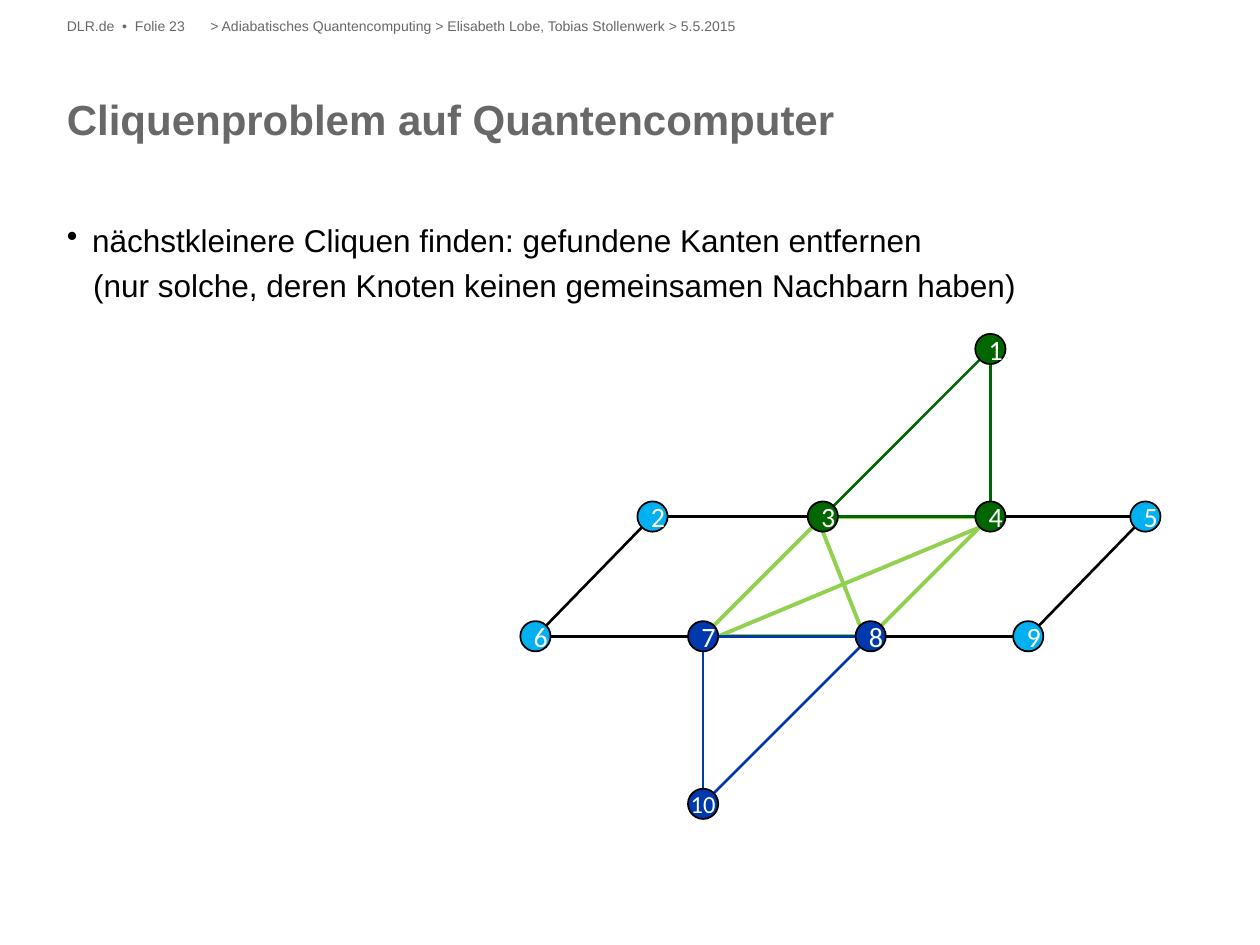
import math

import pptx
import pptx.dml.color
import pptx.enum.shapes
import pptx.enum.text
import pptx.oxml.ns
import pptx.util
from lxml import etree

Pt = pptx.util.Pt
ANCHOR = pptx.enum.text.MSO_ANCHOR
ALIGN = pptx.enum.text.PP_ALIGN
HUES = {"grey": "686868", "black": "000000", "white": "FFFFFF", "sky": "00B0F0",
        "lime": "92D050", "green": "006600", "blue": "0039AC"}


def tint(name):
    return pptx.dml.color.RGBColor.from_string(HUES[name])


def write(shape, lines, size, hue, face="Arial"):
    """Fill a shape without margins with paragraphs in one font."""
    frame = shape.text_frame
    frame.word_wrap = True
    frame.auto_size = pptx.enum.text.MSO_AUTO_SIZE.NONE
    frame.vertical_anchor = ANCHOR.TOP
    frame.margin_left = frame.margin_right = 0
    frame.margin_top = frame.margin_bottom = 0
    frame.text = "\n".join(lines)
    for par in frame.paragraphs:
        par.alignment = ALIGN.LEFT
        par.font.name = face
        par.font.size = Pt(size)
        par.font.color.rgb = tint(hue)
    return frame.paragraphs


deck = pptx.Presentation()
deck.slide_width, deck.slide_height = Pt(720), Pt(540)
slide = deck.slides.add_slide(deck.slide_layouts[5])
shapes = slide.shapes

# Header, title and text
heads = [(38.2, 82, "DLR.de  •  Folie 23"),
         (120.2, 561.6, "> Adiabatisches Quantencomputing > Elisabeth Lobe, "
                        "Tobias Stollenwerk > 5.5.2015")]
for left, width, text in heads:
    box = shapes.add_textbox(Pt(left), Pt(10.1), Pt(width), Pt(11.5))
    write(box, [text], 8, "grey")

title = shapes.title
title.left, title.top, title.width, title.height = Pt(38.2), Pt(51.1), Pt(643.7), Pt(58.3)
head = write(title, ["Cliquenproblem auf Quantencomputer"], 24, "grey")[0]
head.font.bold = True
head.line_spacing = 1.08

body = shapes.add_textbox(Pt(38.2), Pt(125.3), Pt(625), Pt(341.3))
first, second = write(body, [
    "nächstkleinere Cliquen finden: gefundene Kanten entfernen",
    "(nur solche, deren Knoten keinen gemeinsamen Nachbarn haben)"], 18, "black")
first.line_spacing = second.line_spacing = 1.05
second.space_before = Pt(3)
for par, left, hang in [(first, 14.4, -14.4), (second, 15, 0)]:
    props = par._p.get_or_add_pPr()
    props.set("marL", str(Pt(left)))
    props.set("indent", str(Pt(hang)))
mark = etree.SubElement(first._p.pPr, pptx.oxml.ns.qn("a:buChar"))
mark.set("char", "•")
first._p.pPr.remove(mark)
first._p.pPr.insert_element_before(mark, "a:tabLst", "a:defRPr", "a:extLst")

# Graph: node centres and colours
STEP, RADIUS = 95.75, 8.64
UPPER, LOWER = 295.2, 363.6
X3, X7 = 470.2, 401.8
nodes = {
    1: (X3 + STEP, UPPER - STEP, "green"),
    2: (372.9, UPPER, "sky"),
    3: (X3, UPPER, "green"),
    4: (X3 + STEP, UPPER, "green"),
    5: (654.5, UPPER, "sky"),
    6: (306, LOWER, "sky"),
    7: (X7, LOWER, "blue"),
    8: (X7 + STEP, LOWER, "blue"),
    9: (587.6, LOWER, "sky"),
    10: (X7, LOWER + STEP, "blue"),
}

# Edges: node and the side of its rim, at both ends
edges = [
    ("black", 1.5, "6 NE 2 SW, 2 E 3 W, 6 E 7 W, 4 E 5 W, 8 E 9 W, 9 NE 5 SW"),
    ("lime", 2.25, "3 S 8 NW, 7 E 4 SW, 7 NE 3 SW, 7 E 8 W, 8 NE 4 SW, 3 E 4 W"),
    ("green", 1.5, "3 E 4 W, 3 NE 1 SW, 1 S 4 N"),
    ("blue", 1.5, "7 E 8 W, 7 S 10 N, 10 NE 8 SW"),
]
SIDES = ["E", "SE", "S", "SW", "W", "NW", "N", "NE"]
for hue, width, group in edges:
    for edge in group.split(", "):
        a, aside, b, bside = edge.split()
        ends = []
        for key, side in [(a, aside), (b, bside)]:
            x, y, _ = nodes[int(key)]
            turn = SIDES.index(side) * math.pi / 4
            ends += [Pt(x + RADIUS * math.cos(turn)), Pt(y + RADIUS * math.sin(turn))]
        line = shapes.add_connector(pptx.enum.shapes.MSO_CONNECTOR.STRAIGHT, *ends)
        line.line.color.rgb = tint(hue)
        line.line.width = Pt(width)
        etree.SubElement(line._element.spPr, pptx.oxml.ns.qn("a:effectLst"))

for key, (x, y, hue) in nodes.items():
    node = shapes.add_shape(pptx.enum.shapes.MSO_SHAPE.OVAL, Pt(x - RADIUS),
                            Pt(y - RADIUS), Pt(2 * RADIUS), Pt(2 * RADIUS))
    node.shadow.inherit = False
    node.fill.solid()
    node.fill.fore_color.rgb = tint(hue)
    node.line.color.rgb = tint("black")
    node.line.width = Pt(1)
    frame = node.text_frame
    frame.word_wrap = key < 10
    frame.vertical_anchor = ANCHOR.MIDDLE
    frame.text = str(key)
    par = frame.paragraphs[0]
    par.alignment = ALIGN.CENTER
    par.font.name = "Calibri"
    par.font.size = Pt(16 if key < 10 else 14)
    par.font.color.rgb = tint("white")

deck.save("out.pptx")
